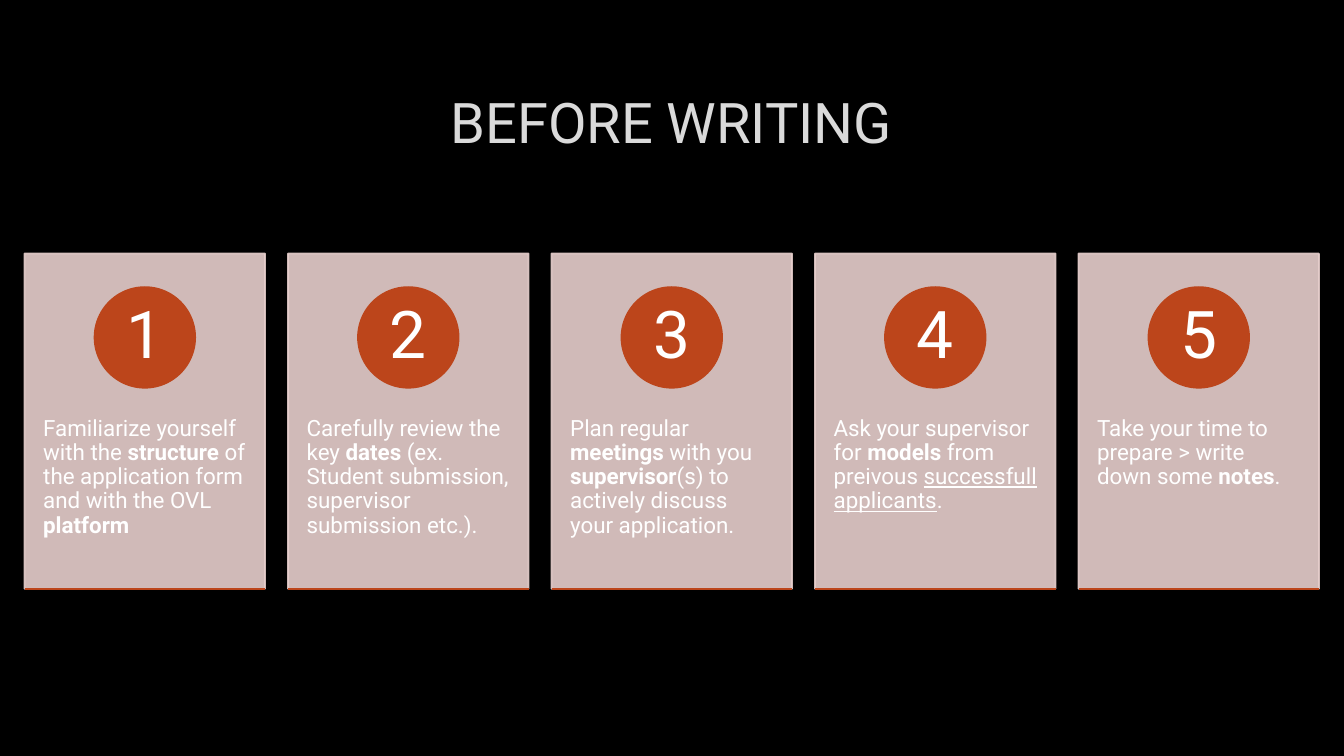
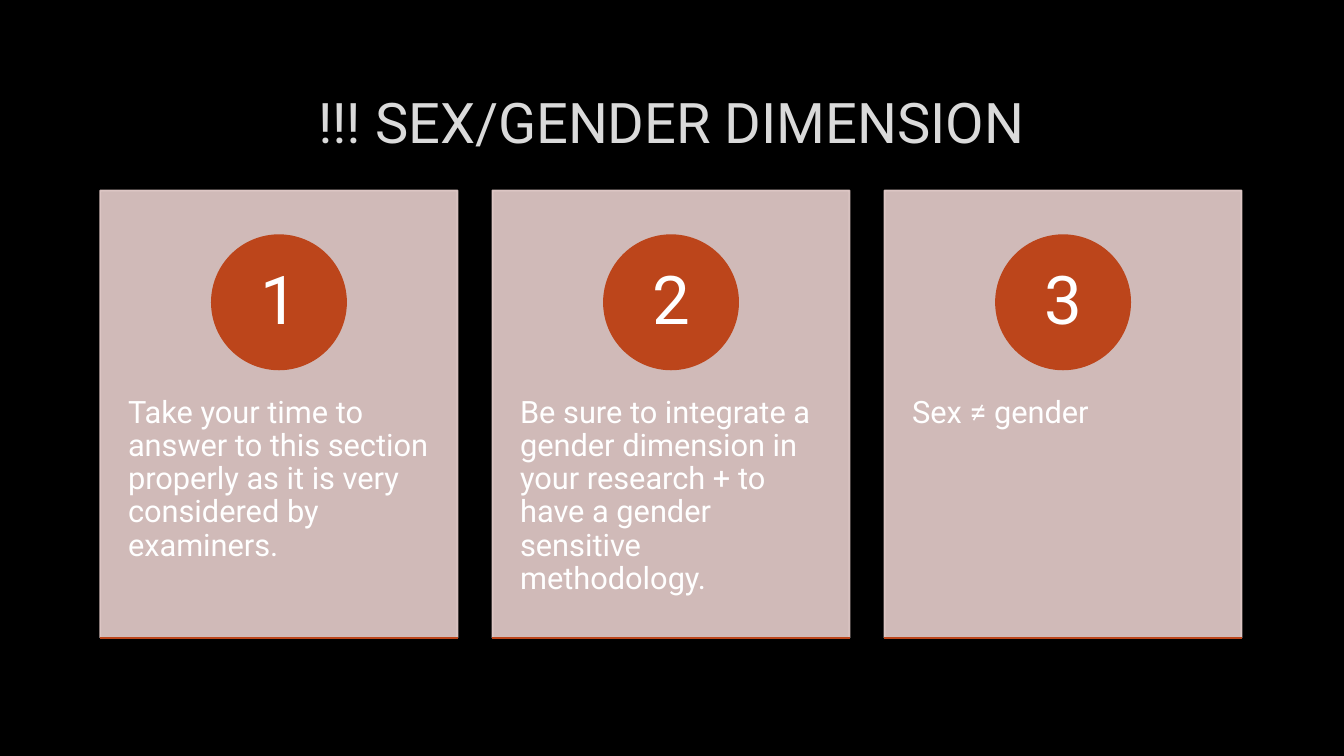
from lxml.etree import SubElement
from pptx import Presentation
from pptx.dml.color import RGBColor
from pptx.enum.shapes import MSO_CONNECTOR, MSO_SHAPE
from pptx.enum.text import MSO_ANCHOR, MSO_AUTO_SIZE, PP_ALIGN
from pptx.oxml.ns import qn
from pptx.util import Cm, Pt

# Shared look
FONT = "Roboto"
BACKGROUND = "000000"
TITLE = "DADADA"
CARD = "E7CFCD"
ACCENT = "BC451B"
WHITE = "FFFFFF"
LINE_WIDTH = Pt(1.25)
BLANK_LAYOUT = 6

# Each card is a list of (text, style) spans; style is "", "bold" or "underline"
WRITING_CARDS = [
    [("Familiarize yourself with the ", ""), ("structure", "bold"),
     (" of the application form and with the OVL ", ""), ("platform", "bold")],
    [("Carefully review the key ", ""), ("dates", "bold"),
     (" (ex. Student submission, supervisor submission etc.).", "")],
    [("Plan regular ", ""), ("meetings", "bold"), (" with you ", ""),
     ("supervisor", "bold"), ("(s) to actively discuss your application.", "")],
    [("Ask your supervisor for ", ""), ("models", "bold"), (" from preivous ", ""),
     ("successfull applicants", "underline"), (".", "")],
    [("Take your time to prepare > write down some ", ""), ("notes", "bold"), (".", "")],
]
GENDER_CARDS = [
    [("Take your time to answer to this section properly as it is very "
      "considered by examiners.", "")],
    [("Be sure to integrate a gender dimension in your research + to have "
      "a gender sensitive methodology.", "")],
    [("Sex ≠ gender", "")],
]


def color(value):
    return RGBColor.from_string(value)


def add_text(page, left, top, width, height, spans, size, font_color=WHITE,
             inset=(0.25, 0.13), centered=False, spacing=None):
    box = page.shapes.add_textbox(Cm(left), Cm(top), Cm(width), Cm(height))
    frame = box.text_frame
    frame.word_wrap = True
    frame.auto_size = MSO_AUTO_SIZE.NONE
    frame.margin_left = frame.margin_right = Cm(inset[0])
    frame.margin_top = frame.margin_bottom = Cm(inset[1])
    frame.vertical_anchor = MSO_ANCHOR.MIDDLE if centered else MSO_ANCHOR.TOP
    para = frame.paragraphs[0]
    para.alignment = PP_ALIGN.CENTER if centered else PP_ALIGN.LEFT
    para.line_spacing = spacing
    for text, style in spans:
        span = para.add_run()
        span.text = text
        span.font.name = FONT
        span.font.size = Pt(size)
        span.font.color.rgb = color(font_color)
        span.font.bold = style == "bold"
        span.font.underline = style == "underline"


def add_panel(page, kind, left, top, width, height, fill, opacity=100):
    panel = page.shapes.add_shape(kind, Cm(left), Cm(top), Cm(width), Cm(height))
    panel.shadow.inherit = False
    panel.fill.solid()
    panel.fill.fore_color.rgb = color(fill)
    panel.line.color.rgb = color(fill)
    panel.line.width = LINE_WIDTH
    if opacity < 100:
        for tint in list(panel.element.spPr.iter(qn("a:srgbClr"))):
            SubElement(tint, qn("a:alpha")).set("val", str(opacity * 1000))


def add_rule(page, left, top, width):
    rule = page.shapes.add_connector(
        MSO_CONNECTOR.STRAIGHT, Cm(left), Cm(top), Cm(left + width), Cm(top))
    rule.line.color.rgb = color(ACCENT)
    rule.line.width = LINE_WIDTH
    SubElement(rule.element.spPr, qn("a:effectLst"))


def add_card(page, number, spans, left, top, width, height, text_size, number_size):
    # Every part of a card is proportional to its size
    circle = 0.3 * height
    circle_left = left + (width - circle) / 2
    circle_top = top + 0.1 * height
    label = 0.71 * circle
    margin = (circle - label) / 2
    text_inset = (width - 0.845 * width) / 2

    add_panel(page, MSO_SHAPE.RECTANGLE, left, top, width, height, CARD, opacity=90)
    add_text(page, left, top + 0.38 * height, width, 0.6 * height, spans, text_size,
             inset=(text_inset, 0.91), spacing=0.9)
    add_panel(page, MSO_SHAPE.OVAL, circle_left, circle_top, circle, circle, ACCENT)
    add_text(page, circle_left + margin, circle_top + margin, label, label,
             [(str(number), "")], number_size, inset=(0.2, 0.03),
             centered=True, spacing=0.9)
    add_rule(page, left, top + height, width)


def add_card_page(deck, title, cards, left, top, width, height, pitch,
                  text_size, number_size):
    page = deck.slides.add_slide(deck.slide_layouts[BLANK_LAYOUT])
    add_text(page, 2.54, 1.7, 28.75, 2.7, [(title, "")], 40, TITLE, centered=True)
    for index, spans in enumerate(cards):
        add_card(page, index + 1, spans, left + index * pitch, top, width, height,
                 text_size, number_size)


def main():
    deck = Presentation()
    deck.slide_width = Cm(33.87)
    deck.slide_height = Cm(19.05)
    backdrop = deck.slide_master.background.fill
    backdrop.solid()
    backdrop.fore_color.rgb = color(BACKGROUND)

    add_card_page(deck, "BEFORE WRITING", WRITING_CARDS, left=0.62, top=6.39,
                  width=6.06, height=8.45, pitch=6.64, text_size=16, number_size=47)
    add_card_page(deck, "!!! SEX/GENDER DIMENSION", GENDER_CARDS, left=2.53, top=4.8,
                  width=9, height=11.27, pitch=9.88, text_size=22, number_size=48)
    deck.save("out.pptx")


if __name__ == "__main__":
    main()
